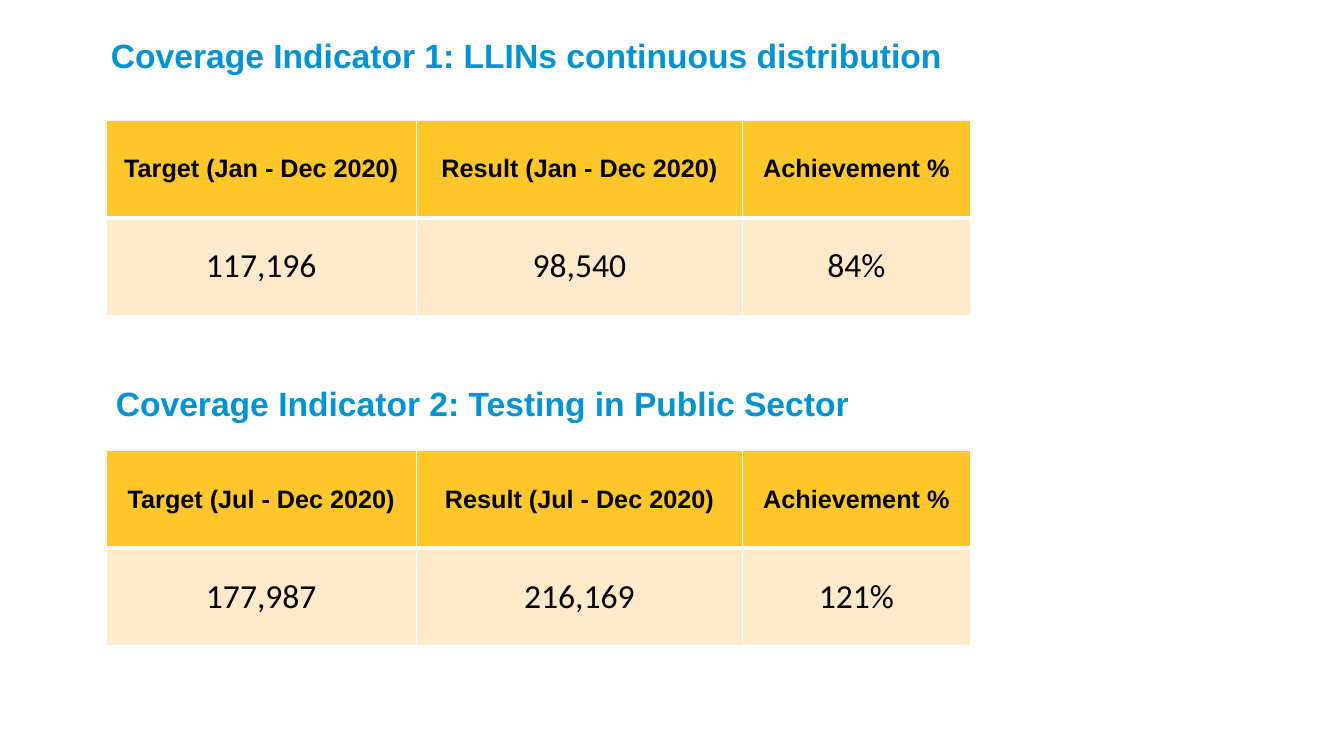
from lxml import etree
from pptx import Presentation
from pptx.dml.color import RGBColor
from pptx.enum.text import MSO_ANCHOR, MSO_AUTO_SIZE, PP_ALIGN
from pptx.oxml.ns import qn
from pptx.util import Inches, Pt

LEFT, CENTER = PP_ALIGN.LEFT, PP_ALIGN.CENTER
MIDDLE = MSO_ANCHOR.MIDDLE
NO_FIT, GROW = MSO_AUTO_SIZE.NONE, MSO_AUTO_SIZE.SHAPE_TO_FIT_TEXT
TITLE_ONLY = 5


def color(value):
    return RGBColor.from_string(value)


class IndicatorSlide:
    blue, black, white = "0092D1", "000000", "FFFFFF"
    gold, cream = "FFC72C", "FFEBCB"
    heading_font, value_font = "Arial", "Calibri"
    column_shares = (7.88, 31.0, 55.23, 72.21)
    row_share = 12.93

    def __init__(self, prs):
        self.prs = prs
        self.s = prs.slides.add_slide(prs.slide_layouts[TITLE_ONLY])

    def x(self, share):
        return round(self.prs.slide_width * share / 100)

    def y(self, share):
        return round(self.prs.slide_height * share / 100)

    def set_text(self, tf, text, font, size, ink, bold, align):
        tf.text = text
        p = tf.paragraphs[0]
        p.alignment = align
        r = p.runs[0]
        r.font.name = font
        r.font.size = Pt(size)
        r.font.bold = bold
        r.font.color.rgb = color(ink)

    def heading(self, tf, text, fit):
        tf.word_wrap = True
        tf.auto_size = fit
        self.set_text(tf, text, self.heading_font, 24, self.blue, True, LEFT)

    def title(self, text, left, top, width, height):
        sp = self.s.shapes.title
        sp.left, sp.top = self.x(left), self.y(top)
        sp.width, sp.height = self.x(width), self.y(height)
        tf = sp.text_frame
        tf.margin_left = tf.margin_right = tf.margin_top = tf.margin_bottom = 0
        tf.vertical_anchor = MIDDLE
        self.heading(tf, text, NO_FIT)

    def subtitle(self, text, left, top, width, height):
        sp = self.s.shapes.add_textbox(
            self.x(left), self.y(top), self.x(width), self.y(height))
        self.heading(sp.text_frame, text, GROW)

    def borders(self, cell, widths):
        tc_pr = cell._tc.get_or_add_tcPr()
        for side, width in widths.items():
            ln = etree.SubElement(tc_pr, qn(f"a:ln{side}"), w=str(Pt(width)))
            fill = etree.SubElement(ln, qn("a:solidFill"))
            etree.SubElement(fill, qn("a:srgbClr"), val=self.white)

    def table(self, top, rows):
        edges = self.column_shares
        sp = self.s.shapes.add_table(
            len(rows), len(edges) - 1, self.x(edges[0]), self.y(top),
            self.x(edges[-1] - edges[0]), self.y(self.row_share * len(rows)))
        table = sp.table
        for column, start, end in zip(table.columns, edges, edges[1:]):
            column.width = self.x(end - start)
        for i, texts in enumerate(rows):
            table.rows[i].height = self.y(self.row_share)
            for j, text in enumerate(texts):
                self.cell(table.cell(i, j), text, i == 0)

    def cell(self, cell, text, header):
        top, bottom = (1, 3) if header else (3, 1)
        self.borders(cell, {"L": 1, "R": 1, "T": top, "B": bottom})
        cell.fill.solid()
        cell.fill.fore_color.rgb = color(self.gold if header else self.cream)
        cell.vertical_anchor = MIDDLE
        font, size = (self.heading_font, 18) if header else (self.value_font, 24)
        self.set_text(cell.text_frame, text, font, size, self.black, header, CENTER)


def main():
    prs = Presentation()
    prs.slide_width, prs.slide_height = Inches(13.33), Inches(7.5)
    slide = IndicatorSlide(prs)
    slide.title("Coverage Indicator 1: LLINs continuous distribution",
                8.25, 1.47, 84.25, 11.6)
    slide.subtitle("Coverage Indicator 2: Testing in Public Sector",
                   7.88, 50, 66, 6.67)
    indicators = (
        (15.87, "Jan - Dec 2020", ("117,196", "98,540", "84%")),
        (59.6, "Jul - Dec 2020", ("177,987", "216,169", "121%")),
    )
    for top, period, values in indicators:
        header = (f"Target ({period})", f"Result ({period})", "Achievement %")
        slide.table(top, (header, values))
    prs.save("out.pptx")


if __name__ == "__main__":
    main()
